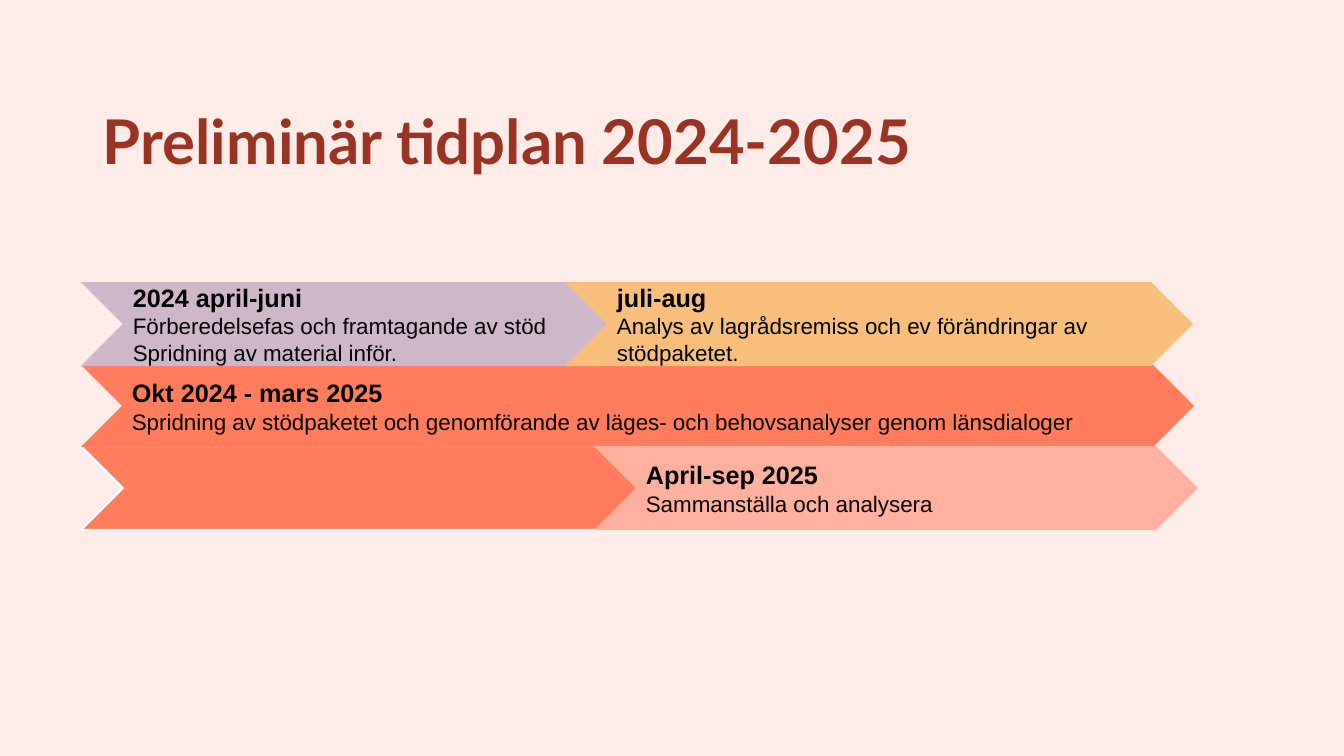
from pptx import Presentation
from pptx.dml.color import RGBColor
from pptx.enum.shapes import MSO_SHAPE
from pptx.enum.text import MSO_ANCHOR, PP_ALIGN
from pptx.util import Pt

CHEVRON = MSO_SHAPE.CHEVRON
MIDDLE = MSO_ANCHOR.MIDDLE
LEFT = PP_ALIGN.LEFT
SCALE = 914400 / 100.8
COLORS = {
    "back": "FFEBE8", "title": "9A3324", "text": "000000", "edge": "FFFFFF",
    "coral": "FF7C5D", "mauve": "CFB7CA", "pink": "FFB09E", "gold": "F8BE7C",
}
STYLES = {
    "title": ({"name": "Lato", "size": Pt(44), "bold": True}, "title"),
    "head": ({"name": "Arial", "size": Pt(18), "bold": True}, "text"),
    "body": ({"name": "Arial", "size": Pt(16), "bold": False}, "text"),
}
PHASES = [
    ((81, 446, 561, 84), "coral", "edge", []),
    ((81, 365, 1113, 82), "coral", None, [
        "Okt 2024 - mars 2025",
        "Spridning av stödpaketet och genomförande av läges- och behovsanalyser genom länsdialoger"]),
    ((81, 282, 561, 84), "mauve", None, [
        "2024 april-juni",
        "Förberedelsefas och framtagande av stöd",
        "Spridning av material inför."]),
    ((594, 446, 604, 84), "pink", None, [
        "April-sep 2025",
        "Sammanställa och analysera"]),
    ((565, 282, 628, 84), "gold", None, [
        "juli-aug",
        "Analys av lagrådsremiss och ev förändringar av stödpaketet."]),
]


def px(n):
    return round(n * SCALE)


def color(name):
    return RGBColor.from_string(COLORS[name])


class Deck:
    """Holds the deck style and the current slide."""

    def __init__(self, width, height):
        self.prs = Presentation()
        self.prs.slide_width, self.prs.slide_height = px(width), px(height)
        self.slide = self.prs.slides.add_slide(self.prs.slide_layouts[6])
        fill = self.slide.background.fill
        fill.solid()
        fill.fore_color.rgb = color("back")

    def label(self, shape, lines, styles, spacing=1.0):
        frame = shape.text_frame
        frame.word_wrap = True
        frame.vertical_anchor = MIDDLE
        for i, line in enumerate(lines):
            para = frame.add_paragraph() if i else frame.paragraphs[0]
            para.alignment = LEFT
            para.line_spacing = spacing
            run = para.add_run()
            run.text = line
            values, ink = STYLES[styles[min(i, len(styles) - 1)]]
            for key, value in values.items():
                setattr(run.font, key, value)
            run.font.color.rgb = color(ink)

    def title(self, box, text):
        shape = self.slide.shapes.add_textbox(*map(px, box))
        self.label(shape, [text], ["title"], 0.9)

    def phase(self, box, fill, edge, lines):
        shape = self.slide.shapes.add_shape(CHEVRON, *map(px, box))
        shape.shadow.inherit = False
        shape.fill.solid()
        shape.fill.fore_color.rgb = color(fill)
        if edge:
            shape.line.color.rgb = color(edge)
            shape.line.width = Pt(1.5)
        else:
            shape.line.fill.background()
        self.label(shape, lines, ["head", "body"])


def main():
    deck = Deck(1344, 756)
    deck.title((93, 77, 1059, 136), "Preliminär tidplan 2024-2025")
    for phase in PHASES:
        deck.phase(*phase)
    deck.prs.save("out.pptx")


if __name__ == "__main__":
    main()
